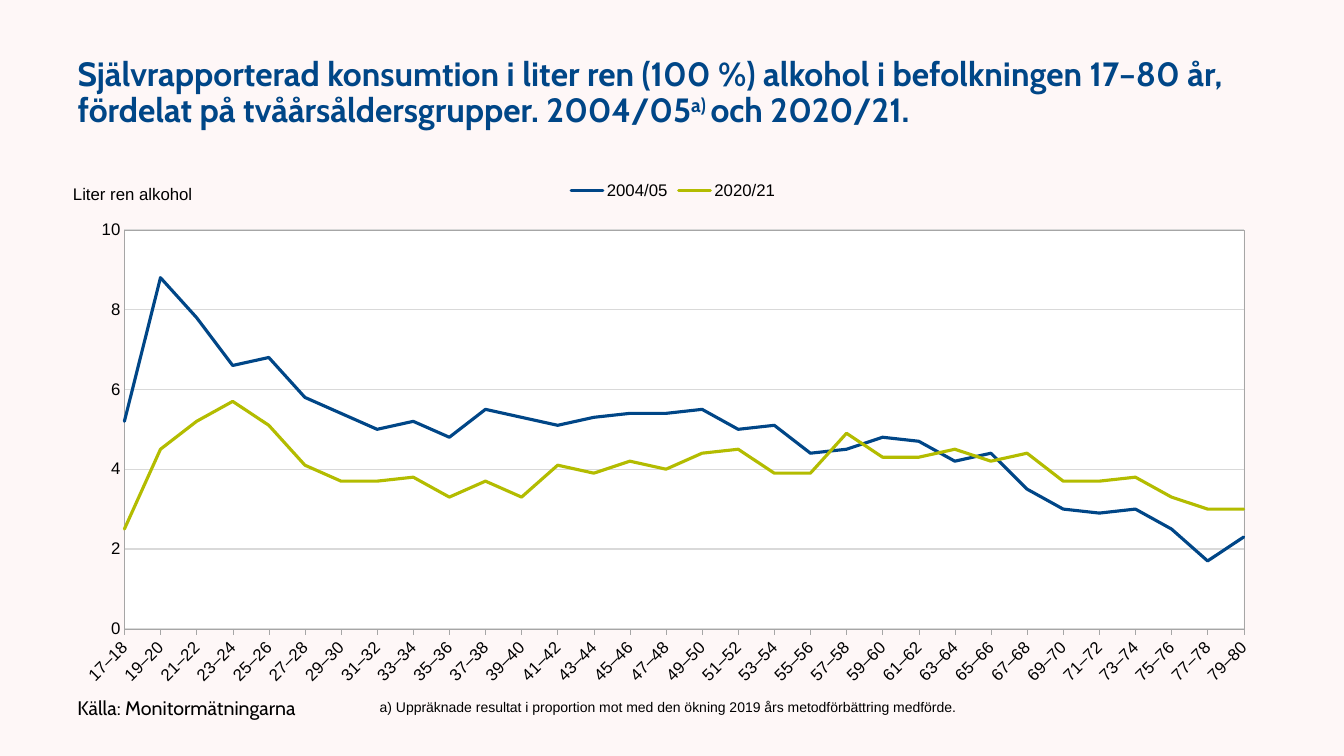
from pptx import Presentation
from pptx.chart.data import CategoryChartData
from pptx.dml.color import RGBColor
from pptx.enum.chart import XL_CHART_TYPE, XL_LEGEND_POSITION, XL_TICK_MARK
from pptx.enum.text import MSO_ANCHOR, MSO_AUTO_SIZE, PP_ALIGN
from pptx.oxml import parse_xml
from pptx.oxml.ns import nsdecls, qn
from pptx.util import Cm, Pt

BLUE, GREEN, BLACK = "004687", "B3BC00", "000000"
AXIS_GREY, GRID_GREY = "A6A6A6", "D9D9D9"

AGE_GROUPS = [f"{age}–{age + 1}" for age in range(17, 80, 2)]
CONSUMPTION = {
    "2004/05": (BLUE, [
        5.2, 8.8, 7.8, 6.6, 6.8, 5.8, 5.4, 5, 5.2, 4.8, 5.5, 5.3, 5.1, 5.3, 5.4, 5.4,
        5.5, 5, 5.1, 4.4, 4.5, 4.8, 4.7, 4.2, 4.4, 3.5, 3, 2.9, 3, 2.5, 1.7, 2.3]),
    "2020/21": (GREEN, [
        2.5, 4.5, 5.2, 5.7, 5.1, 4.1, 3.7, 3.7, 3.8, 3.3, 3.7, 3.3, 4.1, 3.9, 4.2, 4,
        4.4, 4.5, 3.9, 3.9, 4.9, 4.3, 4.3, 4.5, 4.2, 4.4, 3.7, 3.7, 3.8, 3.3, 3, 3]),
}


def color(value):
    return RGBColor.from_string(value)


def style_font(font, size, name, value, bold=False):
    font.size = Pt(size)
    font.name = name
    font.bold = bold
    font.color.rgb = color(value)


def style_line(line, value, width):
    line.color.rgb = color(value)
    line.width = Pt(width)


def add_run(paragraph, text, size, name, value, bold=False):
    run = paragraph.add_run()
    run.text = text
    style_font(run.font, size, name, value, bold)
    return run


def manual_layout(x, y, size=None):
    """Return a chart layout given in fractions of the chart area."""
    target = '<c:layoutTarget val="inner"/>' if size else ""
    extent = f'<c:w val="{size[0]}"/><c:h val="{size[1]}"/>' if size else ""
    return parse_xml(
        f'<c:layout {nsdecls("c")}><c:manualLayout>{target}'
        '<c:xMode val="edge"/><c:yMode val="edge"/>'
        f'<c:x val="{x}"/><c:y val="{y}"/>{extent}</c:manualLayout></c:layout>')


def set_layout(parent, layout, index):
    for present in parent.findall(qn("c:layout")):
        parent.remove(present)
    parent.insert(index, layout)


def fill_title(slide, left, top, width, height):
    title = slide.shapes.title
    title.left, title.top, title.width, title.height = left, top, width, height
    frame = title.text_frame
    frame.word_wrap = True
    frame.auto_size = MSO_AUTO_SIZE.NONE
    frame.vertical_anchor = MSO_ANCHOR.MIDDLE
    paragraph = frame.paragraphs[0]
    paragraph.alignment = PP_ALIGN.LEFT
    paragraph.line_spacing = 0.9
    heading = ("Självrapporterad konsumtion i liter ren (100 %) alkohol i befolkningen "
               "17–80 år, fördelat på tvåårsåldersgrupper. 2004/05")
    add_run(paragraph, heading, 24, "Cabin", BLUE, True)
    note_mark = add_run(paragraph, "a) ", 24, "Cabin", BLUE, True)
    note_mark.font._element.set("baseline", "30000")
    add_run(paragraph, "och 2020/21.", 24, "Cabin", BLUE, True)


def add_label(slide, text, size, name, left, top, width, height):
    frame = slide.shapes.add_textbox(left, top, width, height).text_frame
    frame.word_wrap = True
    frame.vertical_anchor = MSO_ANCHOR.MIDDLE
    add_run(frame.paragraphs[0], text, size, name, BLACK)


def style_axes(chart):
    for axis in (chart.category_axis, chart.value_axis):
        style_font(axis.tick_labels.font, 12, "Arial", BLACK)
        style_line(axis.format.line, AXIS_GREY, 0.25)
        axis.minor_tick_mark = XL_TICK_MARK.NONE

    # Slanted age groups
    ages = chart.category_axis
    ages.major_tick_mark = XL_TICK_MARK.OUTSIDE
    ages._element.find(qn("c:txPr")).find(qn("a:bodyPr")).set("rot", "-2700000")

    # Litre scale, with lines starting on the axis itself
    litres = chart.value_axis
    litres.minimum_scale, litres.maximum_scale, litres.major_unit = 0, 10, 2
    litres.major_tick_mark = XL_TICK_MARK.NONE
    litres.tick_labels.number_format = "0"
    litres.tick_labels.number_format_is_linked = False
    litres.has_major_gridlines = True
    style_line(litres.major_gridlines.format.line, GRID_GREY, 0.75)
    for crossing in litres._element.findall(qn("c:crossBetween")):
        litres._element.remove(crossing)
    litres._element.find(qn("c:crosses")).addnext(
        parse_xml(f'<c:crossBetween {nsdecls("c")} val="midCat"/>'))

    # Horizontal axis title above the scale
    frame = litres.axis_title.text_frame
    add_run(frame.paragraphs[0], "Liter ren alkohol", 12, "Arial", BLACK)
    frame._txBody.find(qn("a:bodyPr")).set("rot", "0")
    set_layout(litres.axis_title._element, manual_layout(0.002, 0.02), 1)


def add_consumption_chart(slide, left, top, width, height):
    data = CategoryChartData(number_format="0.0")
    data.categories = AGE_GROUPS
    for name, (_, values) in CONSUMPTION.items():
        data.add_series(name, values)
    chart = slide.shapes.add_chart(
        XL_CHART_TYPE.LINE, left, top, width, height, data).chart
    style_font(chart.font, 12, "Arial", BLACK)
    chart.has_title = False
    chart.plots[0].vary_by_categories = False

    # Legend
    chart.has_legend = True
    chart.legend.position = XL_LEGEND_POSITION.TOP
    chart.legend.include_in_layout = False
    style_font(chart.legend.font, 12, "Arial", BLACK)

    # Lines
    for series in chart.plots[0].series:
        series.smooth = False
        style_line(series.format.line, CONSUMPTION[series.name][0], 2.25)
        series.format.line._ln.set("cap", "rnd")

    style_axes(chart)

    # White plot area with a thin frame
    plot_area = chart._chartSpace.chart.plotArea
    set_layout(plot_area, manual_layout(0.047, 0.115, (0.924, 0.77)), 0)
    plot_area.append(parse_xml(
        f'<c:spPr {nsdecls("c", "a")}>'
        '<a:solidFill><a:srgbClr val="FFFFFF"/></a:solidFill>'
        f'<a:ln w="3175"><a:solidFill><a:srgbClr val="{AXIS_GREY}"/></a:solidFill></a:ln>'
        '</c:spPr>'))


def build_chart_slide(presentation):
    slide = presentation.slides.add_slide(presentation.slide_layouts[5])
    slide.background.fill.solid()
    slide.background.fill.fore_color.rgb = color("FEF7F7")
    margin = Cm(1.7)
    fill_title(slide, margin, Cm(0.76), Cm(30.48), Cm(3.18))
    add_consumption_chart(slide, margin, Cm(4.29), Cm(30.53), Cm(13.06))

    # Source and footnote
    add_label(slide, "Källa: Monitormätningarna", 14, "Cabin",
              margin, Cm(17.35), Cm(7.5), Cm(0.94))
    add_label(slide, "a) Uppräknade resultat i proportion mot med den ökning 2019 års "
              "metodförbättring medförde.", 10, "Arial",
              Cm(9.32), Cm(17.48), Cm(16.94), Cm(0.69))


def main():
    presentation = Presentation()
    presentation.slide_width, presentation.slide_height = Cm(33.87), Cm(19.05)
    build_chart_slide(presentation)
    presentation.save("out.pptx")


if __name__ == "__main__":
    main()
